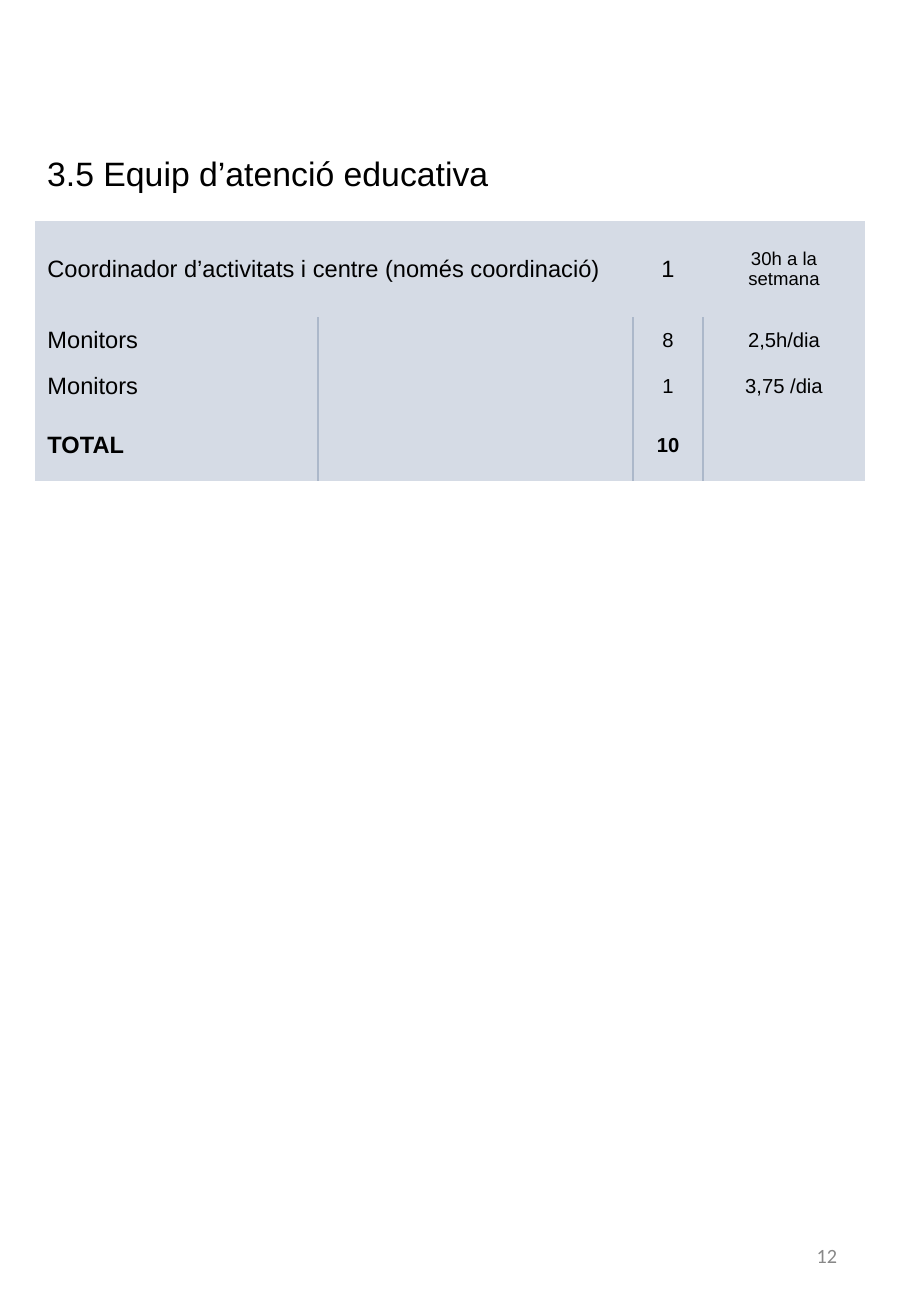
from dataclasses import dataclass

from lxml import etree
from pptx import Presentation
from pptx.dml.color import RGBColor
from pptx.enum.text import MSO_ANCHOR, PP_ALIGN
from pptx.oxml.ns import qn
from pptx.util import Pt

LEFT, CENTER, RIGHT = PP_ALIGN.LEFT, PP_ALIGN.CENTER, PP_ALIGN.RIGHT
TOP, MIDDLE = MSO_ANCHOR.TOP, MSO_ANCHOR.MIDDLE
EMU_PER_PX = 9144  # 100 px to the inch
NO_GRID_STYLE = "{2D5ABB26-0587-4C30-8999-92F81FD0307C}"


@dataclass(frozen=True)
class Theme:
    body_font: str = "Arial"
    number_font: str = "Calibri"
    ink: str = "000000"
    muted: str = "888888"
    band: str = "D5DBE5"
    rule: str = "ACB8CA"
    rule_width: float = 1.5
    title: int = 20
    label: int = 14
    value: int = 12
    note: int = 11


THEME = Theme()

COLUMNS = [233, 259, 58, 133]
ROWS = [79, 38, 38, 59]
# Role, headcount, hours, size of headcount, size of hours, bold
STAFF = [
    ("Coordinador d’activitats i centre (només coordinació)", "1",
     "30h a la setmana", THEME.label, THEME.note, False),
    ("Monitors", "8", "2,5h/dia", THEME.value, THEME.value, False),
    ("Monitors", "1", "3,75 /dia", THEME.value, THEME.value, False),
    ("TOTAL", "10", "", THEME.value, THEME.value, True),
]


def px(length):
    return int(length * EMU_PER_PX)


def write(frame, text, size, align=LEFT, font=THEME.body_font,
          color=THEME.ink, bold=False):
    paragraph = frame.paragraphs[0]
    paragraph.alignment = align
    if not text:
        # An empty cell keeps a small line height
        etree.SubElement(paragraph._p, qn("a:endParaRPr"), sz=str(size * 100))
        return
    run = paragraph.add_run()
    run.text = text
    run.font.size = Pt(size)
    run.font.name = font
    run.font.bold = bold
    run.font.color.rgb = RGBColor.from_string(color)


def add_line_of_text(slide, box, text, size, anchor=TOP, **style):
    frame = slide.shapes.add_textbox(*map(px, box)).text_frame
    frame.word_wrap = True
    frame.vertical_anchor = anchor
    write(frame, text, size, **style)


def add_borders(cell, sides):
    properties = cell._tc.get_or_add_tcPr()
    for position, side in enumerate(sides):
        line = etree.Element(qn(f"a:ln{side}"), w=str(Pt(THEME.rule_width)))
        fill = etree.SubElement(line, qn("a:solidFill"))
        etree.SubElement(fill, qn("a:srgbClr"), val=THEME.rule)
        properties.insert(position, line)


def add_staff_table(slide, box):
    table = slide.shapes.add_table(len(ROWS), len(COLUMNS), *map(px, box)).table
    table.first_row = table.horz_banding = False
    table._tbl.tblPr.find(qn("a:tableStyleId")).text = NO_GRID_STYLE
    for column, width in zip(table.columns, COLUMNS):
        column.width = px(width)
    for row, height in zip(table.rows, ROWS):
        row.height = px(height)

    for r, (role, headcount, hours, count_size, hours_size, bold) in enumerate(STAFF):
        entries = [
            (role, THEME.label, LEFT),
            ("", THEME.value, LEFT),
            (headcount, count_size, CENTER),
            (hours, hours_size, CENTER),
        ]
        for c, (text, size, align) in enumerate(entries):
            cell = table.cell(r, c)
            cell.fill.solid()
            cell.fill.fore_color.rgb = RGBColor.from_string(THEME.band)
            cell.vertical_anchor = MIDDLE
            write(cell.text_frame, text, size, align, bold=bold)
            # Vertical rules flank the second column below the first row
            if r > 0:
                add_borders(cell, ["R", "LR", "L", ""][c])
    table.cell(0, 0).merge(table.cell(0, 1))


def build_team_slide(slide, box):
    left, top, width, height = box
    # Section heading
    add_line_of_text(slide, (left + 29, top + 121, 487, 44),
                     "3.5 Equip d’atenció educativa", THEME.title)
    # Staff table
    add_staff_table(slide, (left + 29, top + 182, sum(COLUMNS), sum(ROWS)))
    # Page number
    add_line_of_text(slide, (left + width - 220, top + height - 79, 169, 58),
                     "12", THEME.value, MIDDLE, align=RIGHT,
                     font=THEME.number_font, color=THEME.muted)


def main():
    page_width, page_height = 750, 1083
    deck = Presentation()
    deck.slide_width, deck.slide_height = px(page_width), px(page_height)
    slide = deck.slides.add_slide(deck.slide_layouts[6])
    build_team_slide(slide, (0, 0, page_width, page_height))
    deck.save("out.pptx")


if __name__ == "__main__":
    main()
